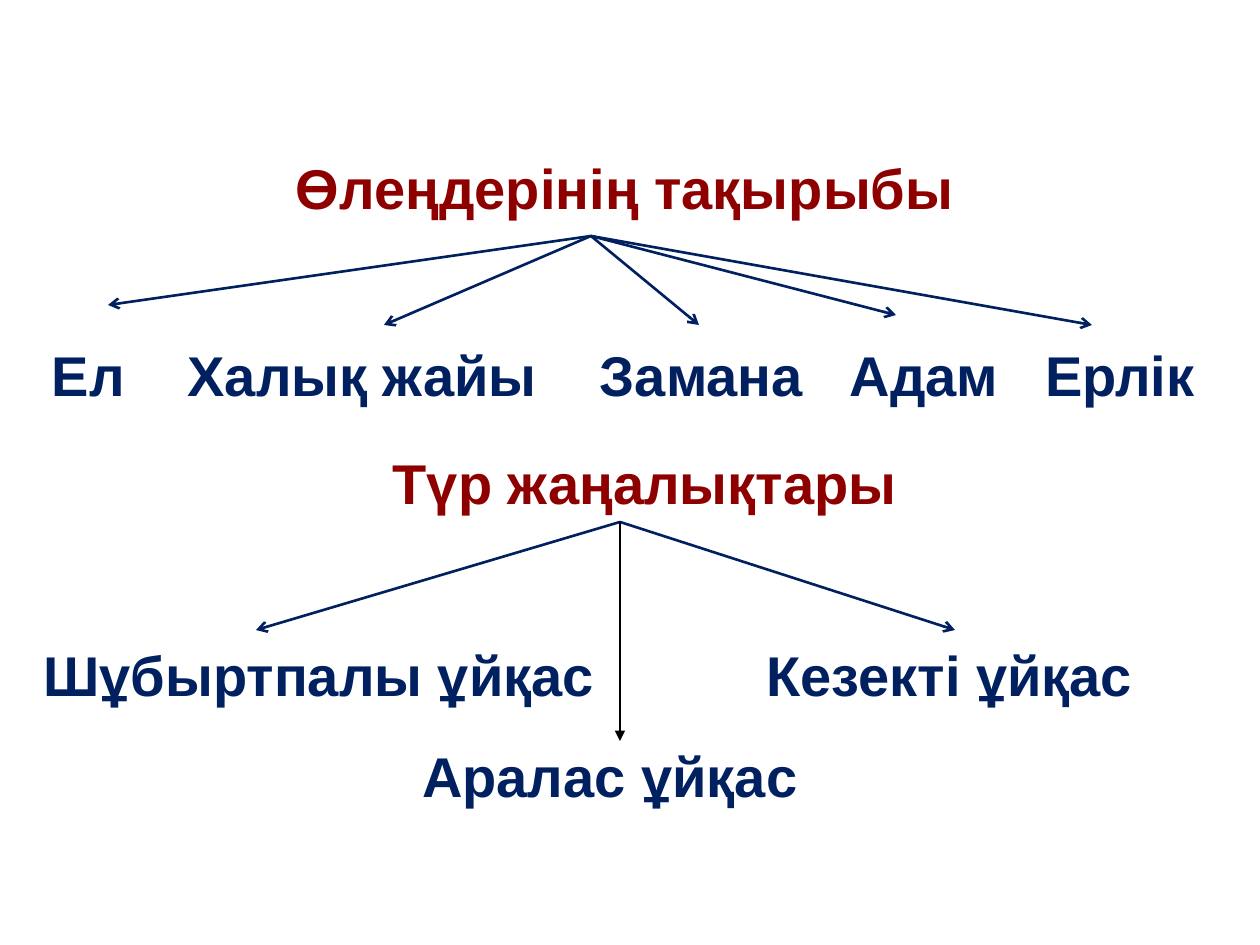
from dataclasses import dataclass

from lxml import etree
from pptx import Presentation
from pptx.dml.color import RGBColor
from pptx.enum.shapes import MSO_CONNECTOR
from pptx.enum.text import MSO_ANCHOR, MSO_AUTO_SIZE, PP_ALIGN
from pptx.oxml.ns import qn
from pptx.util import Emu, Pt

STRAIGHT = MSO_CONNECTOR.STRAIGHT
TOP, MIDDLE = MSO_ANCHOR.TOP, MSO_ANCHOR.MIDDLE
LEFT, CENTER = PP_ALIGN.LEFT, PP_ALIGN.CENTER
NO_FIT = MSO_AUTO_SIZE.NONE


@dataclass(frozen=True)
class Theme:
    """Colours, font and sizes of the slide."""
    heading: RGBColor = RGBColor(0x8E, 0x00, 0x00)
    text: RGBColor = RGBColor(0x00, 0x20, 0x60)
    accent: RGBColor = RGBColor(0x00, 0x00, 0x00)
    font: str = "Arial"
    size: int = 32
    line: float = 1.5
    thin: float = 0.75


THEME = Theme()


def px(n):
    """Convert pixels at 126 to the inch into EMU."""
    return Emu(round(n * 914400 / 126))


def add_run(p, text, color, spacing=0):
    """Add a bold run, widened by a character spacing in px."""
    r = p.add_run()
    r.text = text
    r.font.name, r.font.size, r.font.bold = THEME.font, Pt(THEME.size), True
    r.font.color.rgb = color
    if spacing:
        r._r.get_or_add_rPr().set("spc", str(round(px(spacing).pt * 100)))


def write_text(sp, *items, box, color=THEME.text, align=CENTER, anchor=MIDDLE,
               inset=(13, 6, 13, 6), gaps=()):
    """Place a shape and write its items on one line, parted by widened spaces."""
    sp.left, sp.top, sp.width, sp.height = map(px, box)
    tf = sp.text_frame
    tf.word_wrap, tf.auto_size, tf.vertical_anchor = True, NO_FIT, anchor
    tf.margin_left, tf.margin_top, tf.margin_right, tf.margin_bottom = map(px, inset)
    p = tf.paragraphs[0]
    p.alignment, p.space_before = align, Pt(0)
    pPr = p._p.get_or_add_pPr()
    pPr.set("marL", "0")
    pPr.set("indent", "0")
    etree.SubElement(pPr, qn("a:buNone"))
    add_run(p, items[0], color)
    for gap, item in zip(gaps, items[1:]):
        add_run(p, " ", color, spacing=gap)
        add_run(p, item, color)


def add_text(s, *items, **fmt):
    """Add a text box holding one formatted line."""
    write_text(s.shapes.add_textbox(0, 0, 0, 0), *items, **fmt)


def add_arrow(s, start, end, color=THEME.text, width=THEME.line, head="arrow"):
    """Draw a straight arrow from start to end."""
    c = s.shapes.add_connector(STRAIGHT, *map(px, start + end))
    c.line.color.rgb, c.line.width = color, Pt(width)
    etree.SubElement(c.line._get_or_add_ln(), qn("a:tailEnd"), type=head)
    etree.SubElement(c._element.spPr, qn("a:effectLst"))


def add_fan(s, start, ends):
    """Draw arrows from one point to several ends."""
    for end in ends:
        add_arrow(s, start, end)


def main():
    """Build the slide and save it."""
    prs = Presentation()
    prs.slide_width, prs.slide_height = px(1260), px(945)
    s = prs.slides.add_slide(prs.slide_layouts[1])
    offset = (13, 6, 29, 6)

    write_text(s.shapes.title, "Өлеңдерінің тақырыбы", box=(187, 108, 892, 158),
               color=THEME.heading, inset=offset)
    write_text(s.placeholders[1], "Ел", "Халық жайы", "Замана", "Адам", "Ерлік",
               box=(39, 335, 1177, 98), align=LEFT, anchor=TOP,
               inset=(13, 5, 0, 6), gaps=(47, 47, 31, 31))
    add_fan(s, (591, 236),
            [(108, 305), (384, 325), (896, 315), (1092, 325), (699, 325)])

    add_text(s, "Түр жаңалықтары", box=(207, 403, 892, 158),
             color=THEME.heading, inset=offset)
    add_text(s, "Шұбыртпалы ұйқас", "Кезекті ұйқас", box=(20, 610, 1152, 129),
             inset=offset, gaps=(156,))
    add_fan(s, (620, 522), [(955, 630), (256, 630)])
    add_arrow(s, (620, 522), (620, 741), color=THEME.accent,
              width=THEME.thin, head="triangle")
    add_text(s, "Аралас ұйқас", box=(34, 711, 1152, 129))
    prs.save("out.pptx")


if __name__ == "__main__":
    main()
